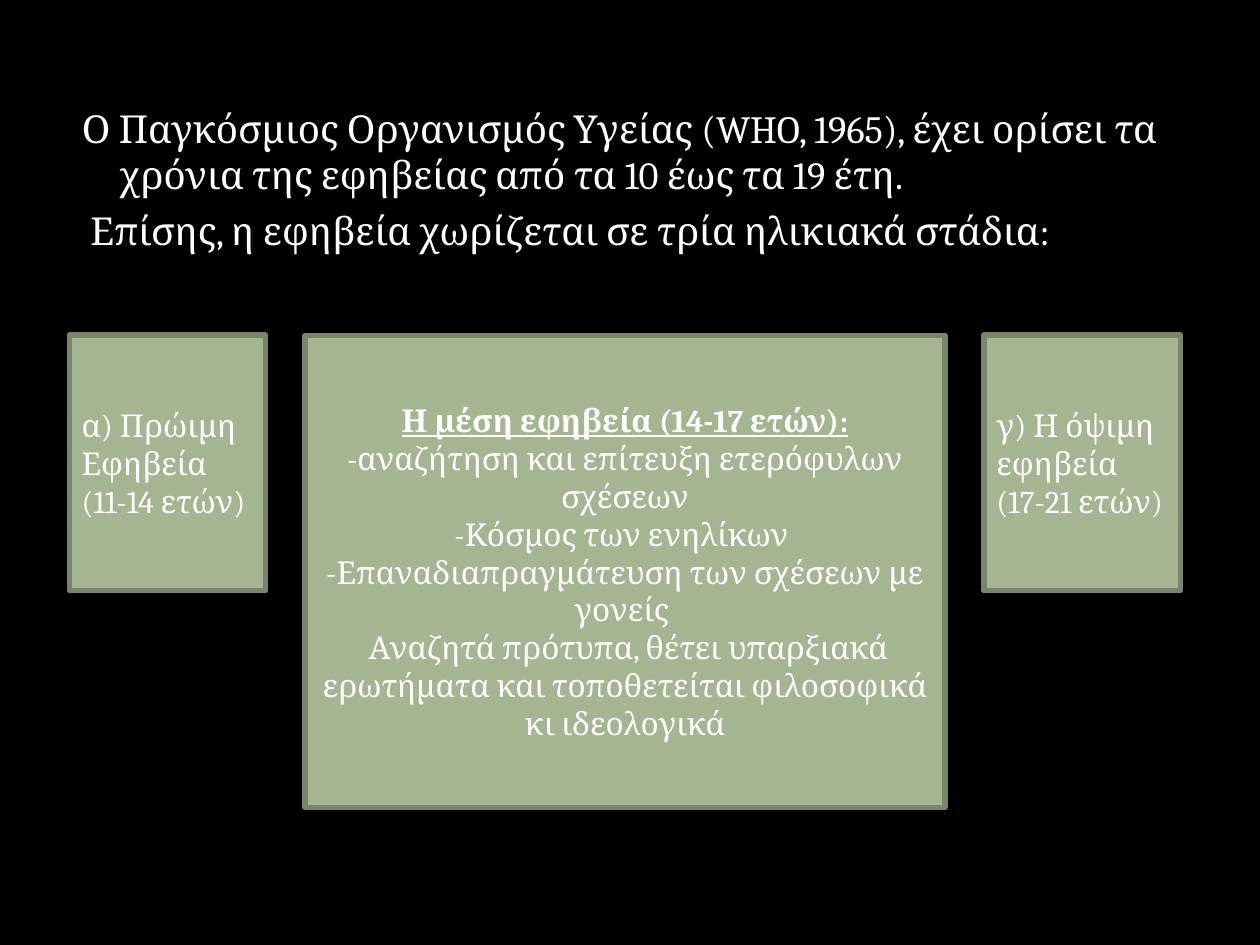
from dataclasses import dataclass

from pptx import Presentation
from pptx.dml.color import RGBColor
from pptx.enum.shapes import MSO_SHAPE
from pptx.enum.text import MSO_ANCHOR, MSO_AUTO_SIZE, PP_ALIGN
from pptx.util import Inches, Pt
from lxml import etree

RECT = MSO_SHAPE.RECTANGLE
TOP, MIDDLE = MSO_ANCHOR.TOP, MSO_ANCHOR.MIDDLE
LEFT, CENTER = PP_ALIGN.LEFT, PP_ALIGN.CENTER
NO_AUTOFIT = MSO_AUTO_SIZE.NONE
NS = "http://schemas.openxmlformats.org/drawingml/2006/main"

COLORS = {"background": "000000", "text": "FFFFFF", "box": "A5B592", "border": "7A866C"}
FONT = "Cambria"
MARGIN, GAP, BOX_TOP = 0.55, 0.31, 2.66
HANGING = 0.3


@dataclass
class Stage:
    lines: list[str]
    width: float = 1.56
    height: float = 2.03
    align: PP_ALIGN = LEFT
    heading: bool = False


INTRO = [
    "Ο Παγκόσμιος Οργανισμός Υγείας (WHO, 1965), έχει ορίσει τα χρόνια της εφηβείας από τα 10 έως τα 19 έτη.",
    " Επίσης, η εφηβεία χωρίζεται σε τρία ηλικιακά στάδια:",
]
STAGES = [
    Stage(["α) Πρώιμη Εφηβεία", "(11-14 ετών)"]),
    Stage(
        [
            "Η μέση εφηβεία (14-17 ετών):",
            "-αναζήτηση και επίτευξη ετερόφυλων σχέσεων",
            "-Κόσμος των ενηλίκων ",
            "-Επαναδιαπραγμάτευση των σχέσεων με γονείς ",
            " Αναζητά πρότυπα, θέτει υπαρξιακά ερωτήματα και τοποθετείται φιλοσοφικά κι ιδεολογικά",
        ],
        width=5.08,
        height=3.75,
        align=CENTER,
        heading=True,
    ),
    Stage(["γ) Η όψιμη εφηβεία", "(17-21 ετών)"]),
]


def rgb(name: str) -> RGBColor:
    return RGBColor.from_string(COLORS[name])


def write(tf, lines: list[str], size: float = 18, align: PP_ALIGN = LEFT,
          anchor: MSO_ANCHOR = MIDDLE, before: float = 0, heading: bool = False) -> None:
    tf.word_wrap = True
    tf.auto_size = NO_AUTOFIT
    tf.vertical_anchor = anchor
    for i, line in enumerate(lines):
        p = tf.add_paragraph() if i else tf.paragraphs[0]
        p.alignment = align
        p.space_before = Pt(before)
        r = p.add_run()
        r.text = line
        r.font.name = FONT
        r.font.size = Pt(size)
        r.font.color.rgb = rgb("text")
        r.font.bold = r.font.underline = heading and i == 0


def hang(p, indent: float) -> None:
    pPr = p._p.get_or_add_pPr()
    pPr.set("marL", str(Inches(indent)))
    pPr.set("indent", str(-Inches(indent)))
    etree.SubElement(pPr, f"{{{NS}}}buNone")


def add_stage(s, stage: Stage, left: float) -> None:
    sp = s.shapes.add_shape(RECT, Inches(left), Inches(BOX_TOP),
                            Inches(stage.width), Inches(stage.height))
    sp.shadow.inherit = False
    sp.fill.solid()
    sp.fill.fore_color.rgb = rgb("box")
    sp.line.color.rgb = rgb("border")
    sp.line.width = Pt(3)
    write(sp.text_frame, stage.lines, align=stage.align, heading=stage.heading)


def add_intro(s) -> None:
    sp = s.placeholders[1]
    sp.left, sp.top, sp.width, sp.height = map(Inches, (MARGIN, 0.78, 9, 1.48))
    write(sp.text_frame, INTRO, size=22, anchor=TOP, before=6)
    for p in sp.text_frame.paragraphs:
        hang(p, HANGING)


def main() -> None:
    prs = Presentation()
    prs.slide_width, prs.slide_height = Inches(10), Inches(7.5)
    s = prs.slides.add_slide(prs.slide_layouts[1])
    s.background.fill.solid()
    s.background.fill.fore_color.rgb = rgb("background")
    title = s.shapes.title.element
    title.getparent().remove(title)

    add_intro(s)
    left = MARGIN
    for stage in STAGES:
        add_stage(s, stage, left)
        left += stage.width + GAP
    prs.save("out.pptx")


if __name__ == "__main__":
    main()
